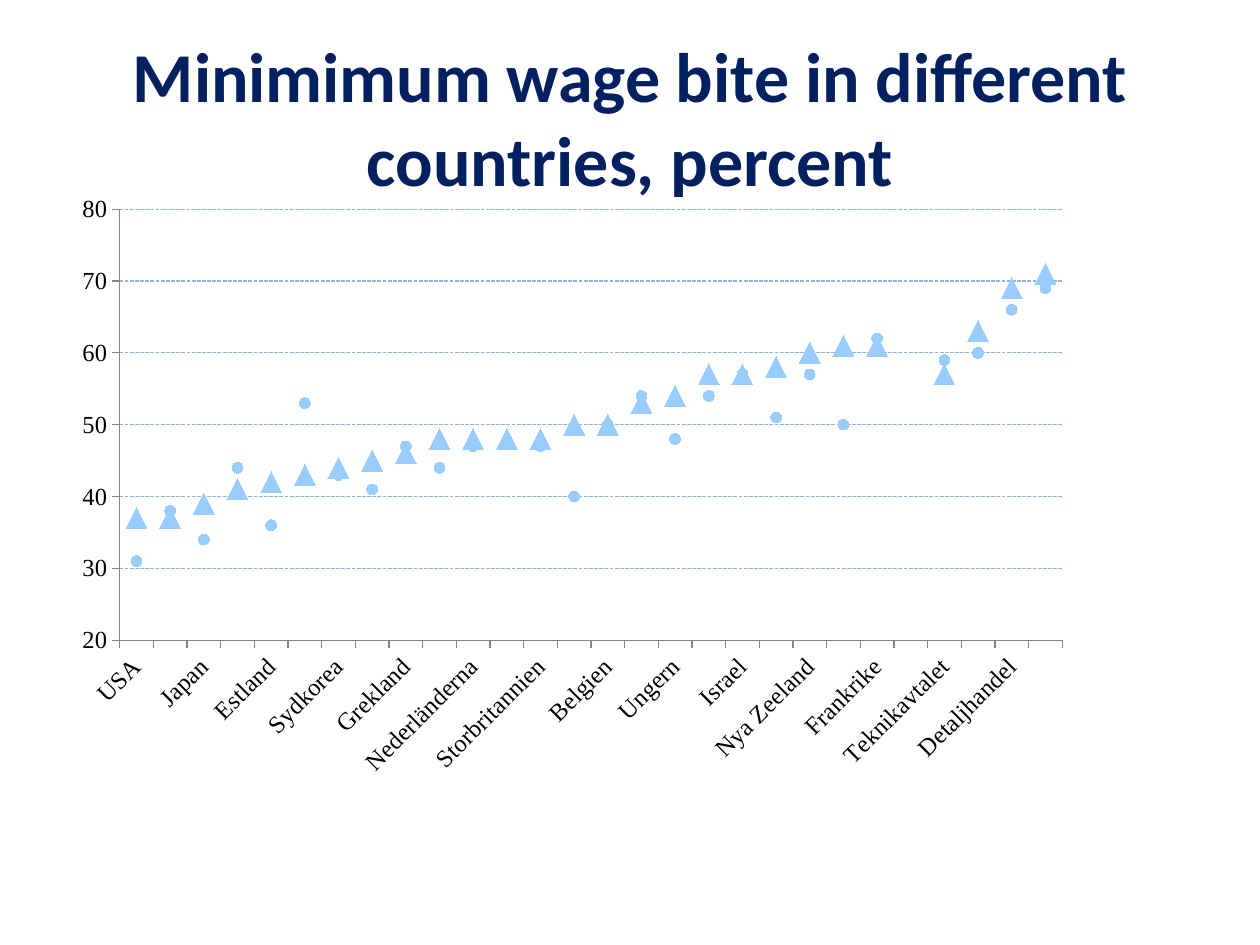
import dataclasses

import lxml.etree
import pptx
import pptx.chart.data
import pptx.dml.color
import pptx.enum.chart
import pptx.enum.dml
import pptx.enum.text
import pptx.oxml.ns
import pptx.util

Pt = pptx.util.Pt
qn = pptx.oxml.ns.qn

LABELS = [
    "USA", "Japan", "Estland", "Sydkorea", "Grekland", "Nederländerna",
    "Storbritannien", "Belgien", "Ungern", "Israel", "Nya Zeeland",
    "Frankrike", "Teknikavtalet", "Detaljhandel",
]
CIRCLES = [
    31, 38, 34, 44, 36, 53, 43, 41, 47, 44, 47, None, 47, 40,
    50, 54, 48, 54, 57, 51, 57, 50, 62, None, 59, 60, 66, 69,
]
TRIANGLES = [
    37, 37, 39, 41, 42, 43, 44, 45, 46, 48, 48, 48, 48, 50,
    50, 53, 54, 57, 57, 58, 60, 61, 61, None, 57, 63, 69, 71,
]


@dataclasses.dataclass(frozen=True)
class Theme:
    title_font: str = "Calibri"
    chart_font: str = "Times New Roman"
    title_size: int = 40
    axis_size: int = 14
    title: str = "002060"
    text: str = "000000"
    marker: str = "99CCFF"
    grid: str = "95B3D7"
    axis: str = "868686"


def rgb(value):
    return pptx.dml.color.RGBColor.from_string(value)


class Deck:
    """Draws styled elements on the current slide."""

    def __init__(self, prs, theme):
        self.theme = theme
        self.s = prs.slides.add_slide(prs.slide_layouts[6])

    def title(self, text, x, y, w, h):
        tf = self.s.shapes.add_textbox(Pt(x), Pt(y), Pt(w), Pt(h)).text_frame
        tf.word_wrap = True
        tf.vertical_anchor = pptx.enum.text.MSO_ANCHOR.MIDDLE
        p = tf.paragraphs[0]
        p.alignment = pptx.enum.text.PP_ALIGN.CENTER
        r = p.add_run()
        r.text = text
        r.font.name = self.theme.title_font
        r.font.size = Pt(self.theme.title_size)
        r.font.bold = True
        r.font.color.rgb = rgb(self.theme.title)

    def marker_chart(self, cats, series, x, y, w, h, plot_box):
        data = pptx.chart.data.CategoryChartData()
        data.categories = cats
        for values, style, size in series:
            data.add_series("", values)
        kind = pptx.enum.chart.XL_CHART_TYPE.LINE_MARKERS
        chart = self.s.shapes.add_chart(kind, Pt(x), Pt(y), Pt(w), Pt(h), data).chart
        chart.has_legend = False
        chart.has_title = False
        chart.font.name = self.theme.chart_font
        chart.plots[0].vary_by_categories = False
        for ser, (values, style, size) in zip(chart.plots[0].series, series):
            ser.smooth = False
            ser.format.line.fill.background()
            ser.marker.style = style
            ser.marker.size = size
            ser.marker.format.fill.solid()
            ser.marker.format.fill.fore_color.rgb = rgb(self.theme.marker)
            ser.marker.format.line.fill.background()
        self.axes(chart)
        self.plot_layout(chart, plot_box)

    def axes(self, chart):
        cat, val = chart.category_axis, chart.value_axis
        for axis in (cat, val):
            axis.major_tick_mark = pptx.enum.chart.XL_TICK_MARK.OUTSIDE
            axis.minor_tick_mark = pptx.enum.chart.XL_TICK_MARK.NONE
            axis.format.line.color.rgb = rgb(self.theme.axis)
            axis.format.line.width = Pt(0.75)
            font = axis.tick_labels.font
            font.name = self.theme.chart_font
            font.size = Pt(self.theme.axis_size)
            font.color.rgb = rgb(self.theme.text)
        val.minimum_scale, val.maximum_scale, val.major_unit = 20, 80, 10
        val.tick_labels.number_format = "0"
        val.tick_labels.number_format_is_linked = False
        val.has_major_gridlines = True
        line = val.major_gridlines.format.line
        line.color.rgb = rgb(self.theme.grid)
        line.width = Pt(0.75)
        line.dash_style = pptx.enum.dml.MSO_LINE.SQUARE_DOT
        body = cat._element.find(qn("c:txPr")).find(qn("a:bodyPr"))
        body.set("rot", "-2700000")
        body.set("vert", "horz")
        last = cat._element.find(qn("c:noMultiLvlLbl"))
        for tag, step in (("c:tickLblSkip", "2"), ("c:tickMarkSkip", "1")):
            skip = lxml.etree.Element(qn(tag))
            skip.set("val", step)
            last.addprevious(skip)

    def plot_layout(self, chart, box):
        area = chart._chartSpace.find(qn("c:chart")).find(qn("c:plotArea"))
        for old in area.findall(qn("c:layout")):
            area.remove(old)
        layout = lxml.etree.Element(qn("c:layout"))
        manual = lxml.etree.SubElement(layout, qn("c:manualLayout"))
        tags = ("layoutTarget", "xMode", "yMode", "x", "y", "w", "h")
        for tag, value in zip(tags, ("inner", "edge", "edge", *box)):
            lxml.etree.SubElement(manual, qn(f"c:{tag}")).set("val", str(value))
        area.insert(0, layout)


def main():
    prs = pptx.Presentation()
    prs.slide_width, prs.slide_height = Pt(720), Pt(540)
    deck = Deck(prs, Theme())
    style = pptx.enum.chart.XL_MARKER_STYLE
    cats = [cat for label in LABELS for cat in (label, "")]
    series = [(CIRCLES, style.CIRCLE, 6), (TRIANGLES, style.TRIANGLE, 12)]
    deck.marker_chart(cats, series, 26.5, 100, 598.5, 391,
                      plot_box=(0.07, 0.05, 0.9, 0.63))
    deck.title("Minimimum wage bite in different countries, percent",
               36, 21.6, 648, 90)
    prs.save("out.pptx")


if __name__ == "__main__":
    main()
